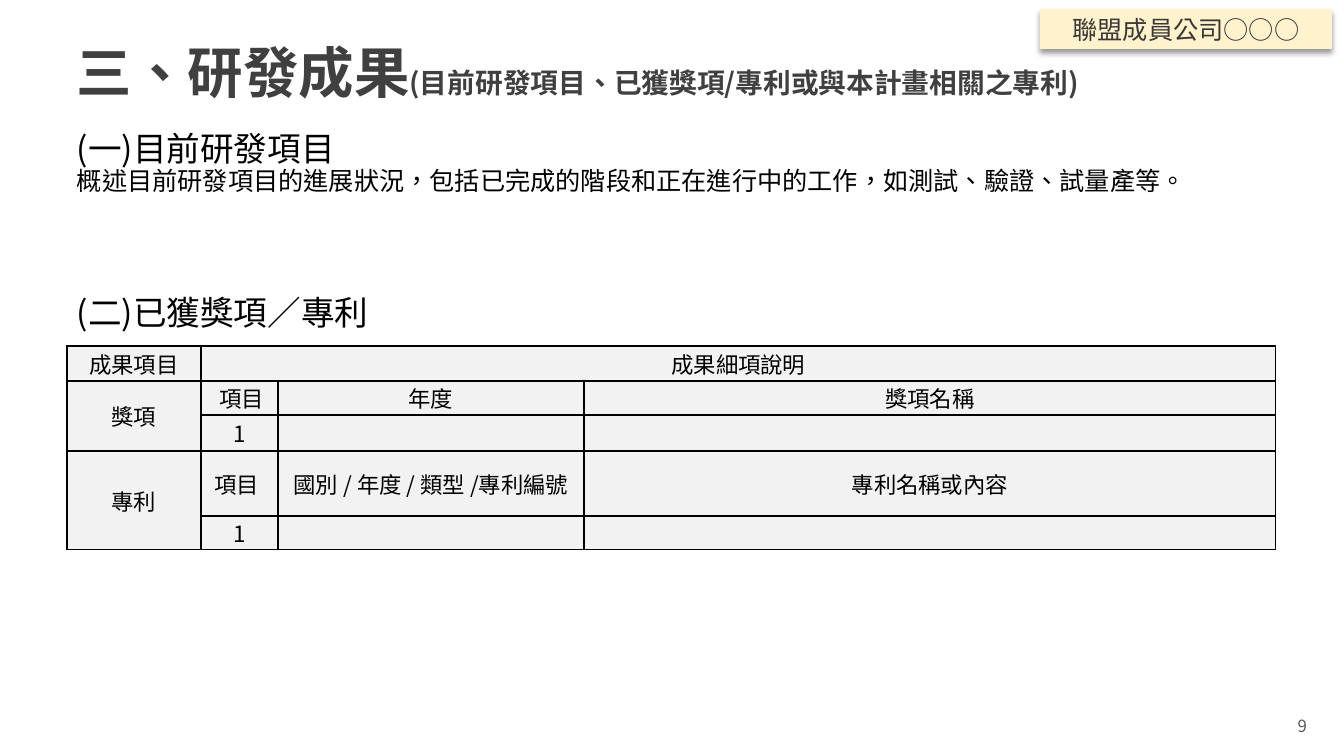
from pptx import Presentation
from pptx.dml.color import RGBColor
from pptx.enum.shapes import MSO_SHAPE as Shape
from pptx.enum.text import MSO_ANCHOR as Anchor, PP_ALIGN as Align
from pptx.oxml import parse_xml
from pptx.oxml.ns import nsdecls, qn
from pptx.util import Emu, Pt

EMU_PER_PX = 914400 / 100.8
FONT = "Noto Sans CJK SC"
LABEL_FONT = "Noto Sans CJK JP"
COLORS = {
    "ink": "000000",
    "title": "404040",
    "page": "595959",
    "label": "3B3838",
    "label_fill": "FFF2CC",
    "cell": "F2F2F2",
}


def px(length):
    return Emu(round(length * EMU_PER_PX))


def rgb(name):
    return RGBColor.from_string(COLORS[name])


def write(paragraph, text, size=16, color="ink", bold=False, font=FONT,
          align=Align.LEFT, spacing=None):
    """Append one formatted run to a paragraph."""
    paragraph.alignment = align
    if spacing:
        paragraph.line_spacing = spacing
    run = paragraph.add_run()
    run.text = text
    run.font.size = Pt(size)
    run.font.bold = bold
    run.font.name = font
    run.font.color.rgb = rgb(color)
    props = run.font._element
    props.set("lang", "zh-TW")
    props.find(qn("a:latin")).addnext(
        parse_xml(f'<a:ea {nsdecls("a")} typeface="{font}"/>'))


class SlideBuilder:
    def __init__(self, slide):
        self.slide = slide

    def text_box(self, x, y, width, height, lines, anchor=Anchor.TOP, inset=0):
        """Each line is a list of (text, format) pairs."""
        box = self.slide.shapes.add_textbox(px(x), px(y), px(width), px(height))
        frame = box.text_frame
        frame.word_wrap = True
        frame.vertical_anchor = anchor
        frame.margin_top = frame.margin_bottom = px(inset)
        for index, line in enumerate(lines):
            paragraph = frame.add_paragraph() if index else frame.paragraphs[0]
            for text, style in line:
                write(paragraph, text, **style)

    def label(self, x, y, width, height, text):
        tag = self.slide.shapes.add_shape(
            Shape.RECTANGLE, px(x), px(y), px(width), px(height))
        tag.fill.solid()
        tag.fill.fore_color.rgb = rgb("label_fill")
        tag.line.fill.background()
        tag.shadow.inherit = False
        tag._element.spPr.find(qn("a:effectLst")).append(parse_xml(
            f'<a:outerShdw {nsdecls("a")} blurRad="{Pt(4)}" dist="{Pt(3)}" '
            f'dir="5400000" algn="t" rotWithShape="0"><a:srgbClr val="{COLORS["ink"]}">'
            '<a:alpha val="40000"/></a:srgbClr></a:outerShdw>'))
        tag.text_frame.vertical_anchor = Anchor.MIDDLE
        write(tag.text_frame.paragraphs[0], text, size=18, color="label",
              font=LABEL_FONT, align=Align.CENTER)

    def table(self, x, y, widths, heights, rows, merges):
        grid = self.slide.shapes.add_table(
            len(heights), len(widths), px(x), px(y),
            px(sum(widths)), px(sum(heights))).table
        for column, width in zip(grid.columns, widths):
            column.width = px(width)
        for row, height in zip(grid.rows, heights):
            row.height = px(height)
        for r, texts in enumerate(rows):
            for c, text in enumerate(texts):
                self.cell(grid.cell(r, c), text)
        for first, last in merges:
            grid.cell(*first).merge(grid.cell(*last))

    def cell(self, cell, text):
        cell.margin_left = cell.margin_right = px(2)
        cell.margin_top = cell.margin_bottom = 0
        cell.vertical_anchor = Anchor.MIDDLE
        for side in "LRTB":
            cell._tc.get_or_add_tcPr().append(parse_xml(
                f'<a:ln{side} {nsdecls("a")} w="{Pt(1)}"><a:solidFill>'
                f'<a:srgbClr val="{COLORS["ink"]}"/></a:solidFill></a:ln{side}>'))
        cell.fill.solid()
        cell.fill.fore_color.rgb = rgb("cell")
        if text:
            write(cell.text_frame.paragraphs[0], text, align=Align.CENTER)


def main():
    deck = Presentation()
    deck.slide_width, deck.slide_height = px(1344), px(756)
    page = SlideBuilder(deck.slides.add_slide(deck.slide_layouts[6]))

    # Title
    title = {"color": "title", "bold": True, "spacing": 0.9}
    page.text_box(67, 38, 1210, 74, [[
        ("三、研發成果", {"size": 39.6, **title}),
        ("(目前研發項目、已獲獎項/專利或與本計畫相關之專利)", {"size": 19.8, **title}),
    ]], anchor=Anchor.MIDDLE, inset=5)

    # Sections
    heading = {"size": 24, "align": Align.JUSTIFY, "spacing": 0.9}
    body = {**heading, "size": 18}
    page.text_box(67, 132, 1210, 80, [
        [("(一)目前研發項目", heading)],
        [("概述目前研發項目的進展狀況，包括已完成的階段和正在進行中的工作，"
          "如測試、驗證、試量產等。", body)],
    ])
    page.text_box(67, 296, 1210, 46, [[("(二)已獲獎項／專利", heading)]])

    # Awards and patents
    page.table(
        67, 346, widths=[134, 77, 306, 692], heights=[35, 34, 36, 65, 34],
        rows=[
            ["成果項目", "成果細項說明", "", ""],
            ["獎項", " 項目", "年度", "獎項名稱"],
            ["", "1", "", ""],
            ["專利", "項目 ", "國別 / 年度 / 類型 /專利編號", "專利名稱或內容"],
            ["", "1", "", ""],
        ],
        merges=[((0, 1), (0, 3)), ((1, 0), (2, 0)), ((3, 0), (4, 0))])

    # Member label and page number
    page.label(1040, 9, 292, 40, "聯盟成員公司○○○")
    page.text_box(1015, 714, 302, 24, [[
        ("9", {"size": 12, "color": "page", "align": Align.RIGHT}),
    ]], anchor=Anchor.MIDDLE)

    deck.save("out.pptx")


if __name__ == "__main__":
    main()
